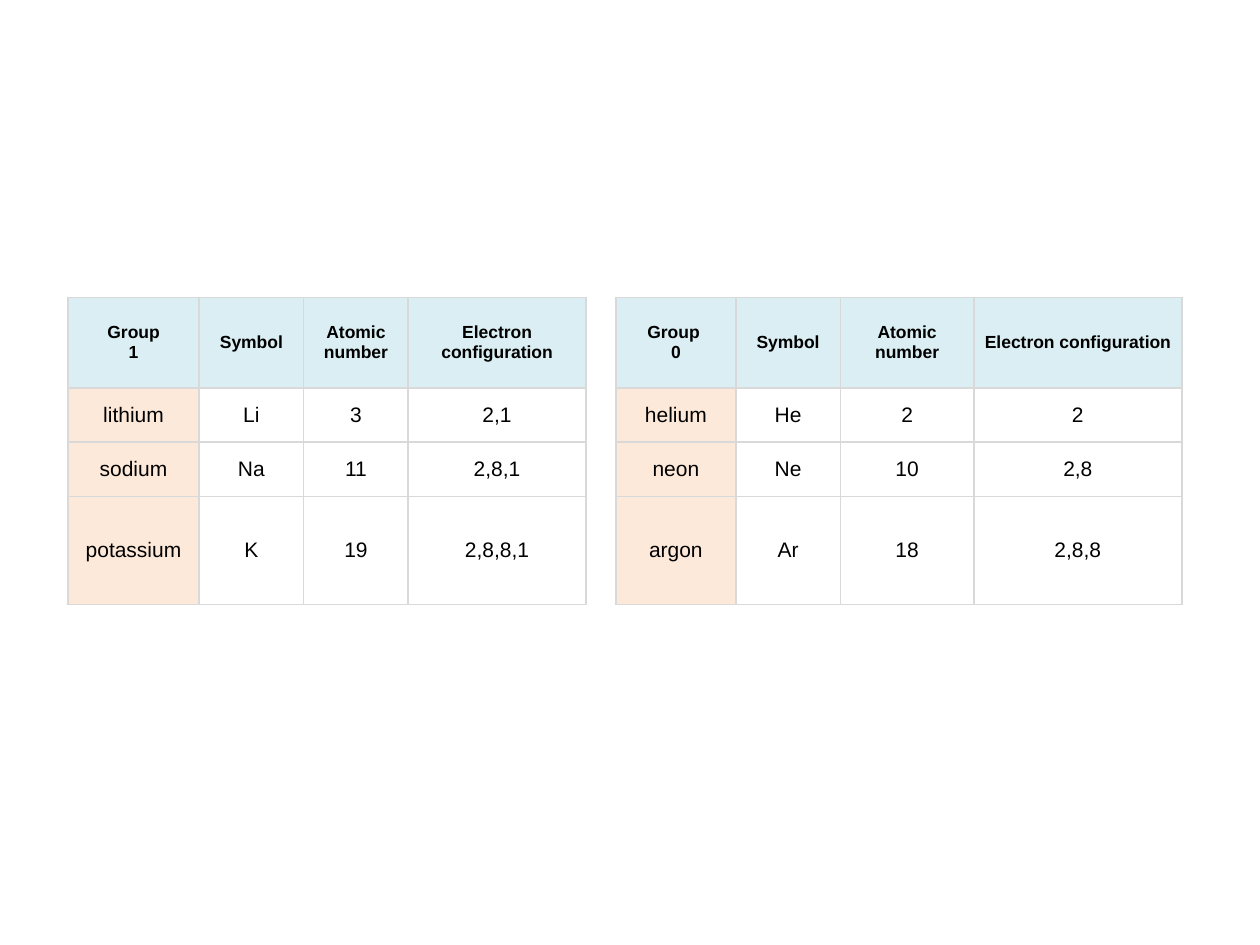
"""Build a slide comparing the electron configurations of Group 1 and Group 0."""
import pptx
import pptx.dml.color
import pptx.enum.text
import pptx.oxml
import pptx.oxml.ns
import pptx.util

COLOURS = {
    "header": "DAEEF3",
    "element": "FDE9D9",
    "plain": "FFFFFF",
    "border": "D9D9D9",
    "text": "000000",
}
COLUMN_WIDTHS = [1.04, 0.83, 0.83, 1.41, 0.24, 0.95, 0.83, 1.06, 1.65]
ROW_HEIGHTS = [0.72, 0.43, 0.43, 0.86]
GAP_COLUMN = 4
ELEMENT_COLUMNS = (0, GAP_COLUMN + 1)
HEADINGS = ["Symbol", "Atomic number", "Electron configuration"]
ROWS = [
    ["Group\n1", *HEADINGS, "", "Group \n0", *HEADINGS],
    ["lithium", "Li", "3", "2,1", "", "helium", "He", "2", "2"],
    ["sodium", "Na", "11", "2,8,1", "", "neon", "Ne", "10", "2,8"],
    ["potassium", "K", "19", "2,8,8,1", "", "argon", "Ar", "18", "2,8,8"],
]
CELL_FORMAT = {
    "vertical_anchor": pptx.enum.text.MSO_ANCHOR.MIDDLE,
    "margin_left": pptx.util.Inches(0.07),
    "margin_right": pptx.util.Inches(0.07),
    "margin_top": 0,
    "margin_bottom": 0,
}
HEADER_FONT = {"name": "Arial", "size": pptx.util.Pt(10), "bold": True}
BODY_FONT = {"name": "Arial", "size": pptx.util.Pt(12), "bold": False}


def set_attributes(target, values):
    for name, value in values.items():
        setattr(target, name, value)


def add_border(cell, side, visible):
    fill = f'<a:solidFill><a:srgbClr val="{COLOURS["border"]}"/></a:solidFill>' if visible else "<a:noFill/>"
    line = f'<a:ln{side} {pptx.oxml.ns.nsdecls("a")} w="{pptx.util.Pt(1)}">{fill}</a:ln{side}>'
    properties = cell._tc.get_or_add_tcPr()
    properties.insert("LRTB".index(side), pptx.oxml.parse_xml(line))


presentation = pptx.Presentation()
presentation.slide_width = pptx.util.Inches(10)
presentation.slide_height = pptx.util.Inches(7.5)
slide = presentation.slides.add_slide(presentation.slide_layouts[6])

table = slide.shapes.add_table(
    len(ROW_HEIGHTS),
    len(COLUMN_WIDTHS),
    pptx.util.Inches(0.54),
    pptx.util.Inches(2.36),
    pptx.util.Inches(sum(COLUMN_WIDTHS)),
    pptx.util.Inches(sum(ROW_HEIGHTS)),
).table
set_attributes(table, {"first_row": False, "horz_banding": False})
for column, width in zip(table.columns, COLUMN_WIDTHS):
    column.width = pptx.util.Inches(width)
for row, height in zip(table.rows, ROW_HEIGHTS):
    row.height = pptx.util.Inches(height)

for row_index, texts in enumerate(ROWS):
    for column_index, text in enumerate(texts):
        cell = table.cell(row_index, column_index)
        is_gap = column_index == GAP_COLUMN
        if is_gap:
            fill_name = "plain"
        elif row_index == 0:
            fill_name = "header"
        elif column_index in ELEMENT_COLUMNS:
            fill_name = "element"
        else:
            fill_name = "plain"
        cell.fill.solid()
        cell.fill.fore_color.rgb = pptx.dml.color.RGBColor.from_string(COLOURS[fill_name])
        set_attributes(cell, CELL_FORMAT)
        for side in "LRTB":
            add_border(cell, side, side in "LR" or not is_gap)
        cell.text_frame.text = text
        for paragraph in cell.text_frame.paragraphs:
            paragraph.alignment = pptx.enum.text.PP_ALIGN.CENTER
            for run in paragraph.runs:
                set_attributes(run.font, HEADER_FONT if row_index == 0 else BODY_FONT)
                run.font.color.rgb = pptx.dml.color.RGBColor.from_string(COLOURS["text"])

presentation.save("out.pptx")
